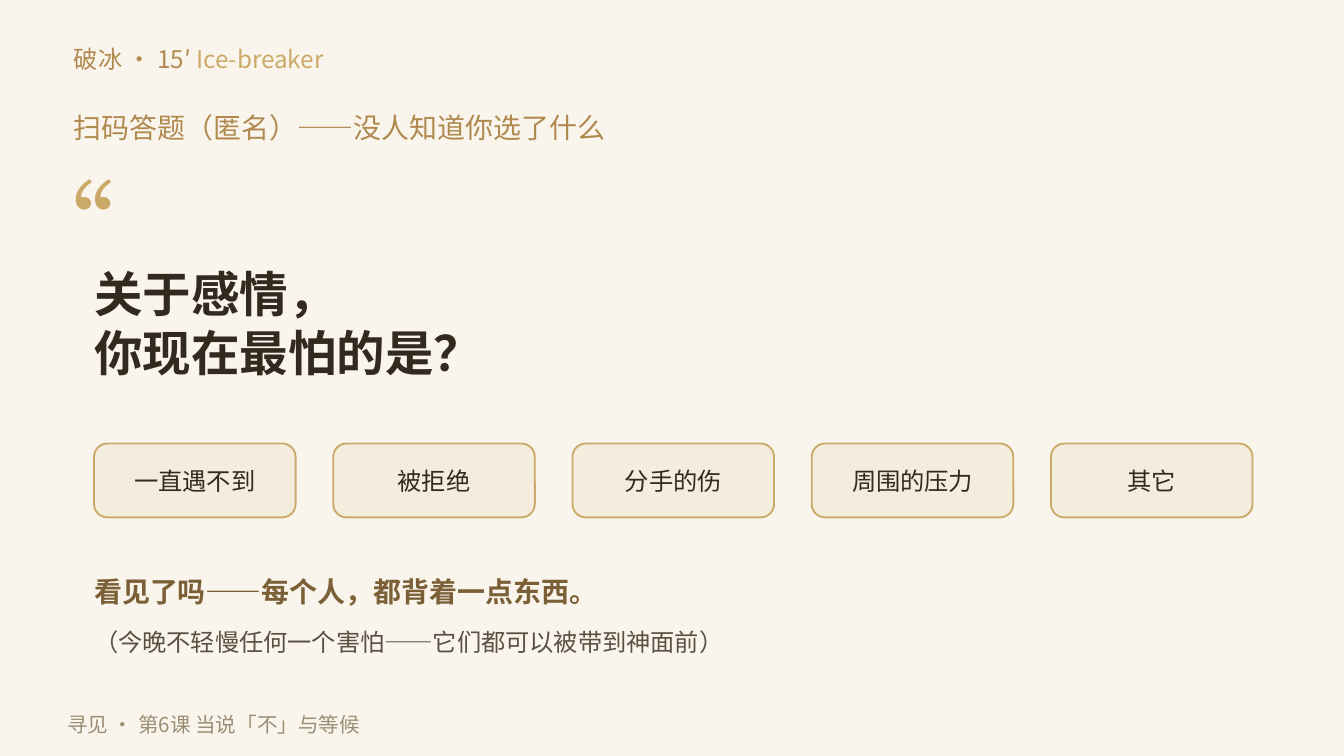
"""Build the ice-breaker question slide with five answer options."""
import lxml.etree
import pptx
import pptx.dml.color
import pptx.enum.shapes
import pptx.enum.text
import pptx.oxml.ns
import pptx.util

Inches = pptx.util.Inches
LEFT = pptx.enum.text.PP_ALIGN.LEFT
CENTER = pptx.enum.text.PP_ALIGN.CENTER
SANS = "Noto Sans CJK SC"
SERIF = "TeX Gyre Schola"
COLORS = {
    "background": "FAF5EC",
    "option": "F4ECDD",
    "gold": "CBA968",
    "bronze": "B0894F",
    "ink": "33291E",
    "brown": "7A5F37",
    "muted": "5C5043",
    "footer": "9C8E76",
}


def rgb(name):
    return pptx.dml.color.RGBColor.from_string(COLORS[name])


def add_text(slide, position, lines, size, font=SANS, bold=False, align=LEFT):
    box = slide.shapes.add_textbox(*[Inches(length) for length in position])
    frame = box.text_frame
    frame.word_wrap = True
    frame.vertical_anchor = pptx.enum.text.MSO_ANCHOR.MIDDLE
    frame.margin_left = frame.margin_top = frame.margin_right = frame.margin_bottom = 0
    for index, line in enumerate(lines):
        paragraph = frame.add_paragraph() if index else frame.paragraphs[0]
        paragraph.alignment = align
        for text, color in line:
            run = paragraph.add_run()
            run.text = text
            run.font.size = pptx.util.Pt(size)
            run.font.bold = bold
            run.font.name = font
            run.font.color.rgb = rgb(color)
            east_asian = lxml.etree.SubElement(run.font._element, pptx.oxml.ns.qn("a:ea"))
            east_asian.set("typeface", font)


presentation = pptx.Presentation()
presentation.slide_width = Inches(10)
presentation.slide_height = Inches(10) * 9 // 16
slide = presentation.slides.add_slide(presentation.slide_layouts[6])

backdrop = slide.shapes.add_shape(
    pptx.enum.shapes.MSO_SHAPE.RECTANGLE, 0, 0, presentation.slide_width, presentation.slide_height
)
backdrop.shadow.inherit = False
backdrop.fill.solid()
backdrop.fill.fore_color.rgb = rgb("background")
backdrop.line.fill.background()

heading = [("破冰 · 15′ ", "bronze"), ("Ice-breaker", "gold")]
question = [[("关于感情，", "ink")], [("你现在最怕的是？", "ink")]]
add_text(slide, (0.55, 0.28, 8.5, 0.32), [heading], 13)
add_text(slide, (0.55, 0.75, 9, 0.4), [[("扫码答题（匿名）——没人知道你选了什么", "bronze")]], 15)
add_text(slide, (0.55, 1.25, 1, 0.7), [[("“", "gold")]], 56, font=SERIF)
add_text(slide, (0.7, 1.85, 8.5, 1.1), question, 26, bold=True)

option_width, option_gap = 1.5, 0.28
for index, label in enumerate(["一直遇不到", "被拒绝", "分手的伤", "周围的压力", "其它"]):
    position = (0.7 + index * (option_width + option_gap), 3.3, option_width, 0.55)
    option = slide.shapes.add_shape(
        pptx.enum.shapes.MSO_SHAPE.ROUNDED_RECTANGLE, *[Inches(length) for length in position]
    )
    option.adjustments[0] = 0.18
    option.shadow.inherit = False
    option.fill.solid()
    option.fill.fore_color.rgb = rgb("option")
    option.line.color.rgb = rgb("gold")
    option.line.width = pptx.util.Pt(1)
    add_text(slide, position, [[(label, "ink")]], 13, align=CENTER)

add_text(slide, (0.7, 4.2, 8.5, 0.4), [[("看见了吗——每个人，都背着一点东西。", "brown")]], 15, bold=True)
add_text(slide, (0.7, 4.6, 8.5, 0.35), [[("（今晚不轻慢任何一个害怕——它们都可以被带到神面前）", "muted")]], 13)
add_text(slide, (0.5, 5.25, 7.5, 0.28), [[("寻见 · 第6课 当说「不」与等候", "footer")]], 11)

presentation.save("out.pptx")
